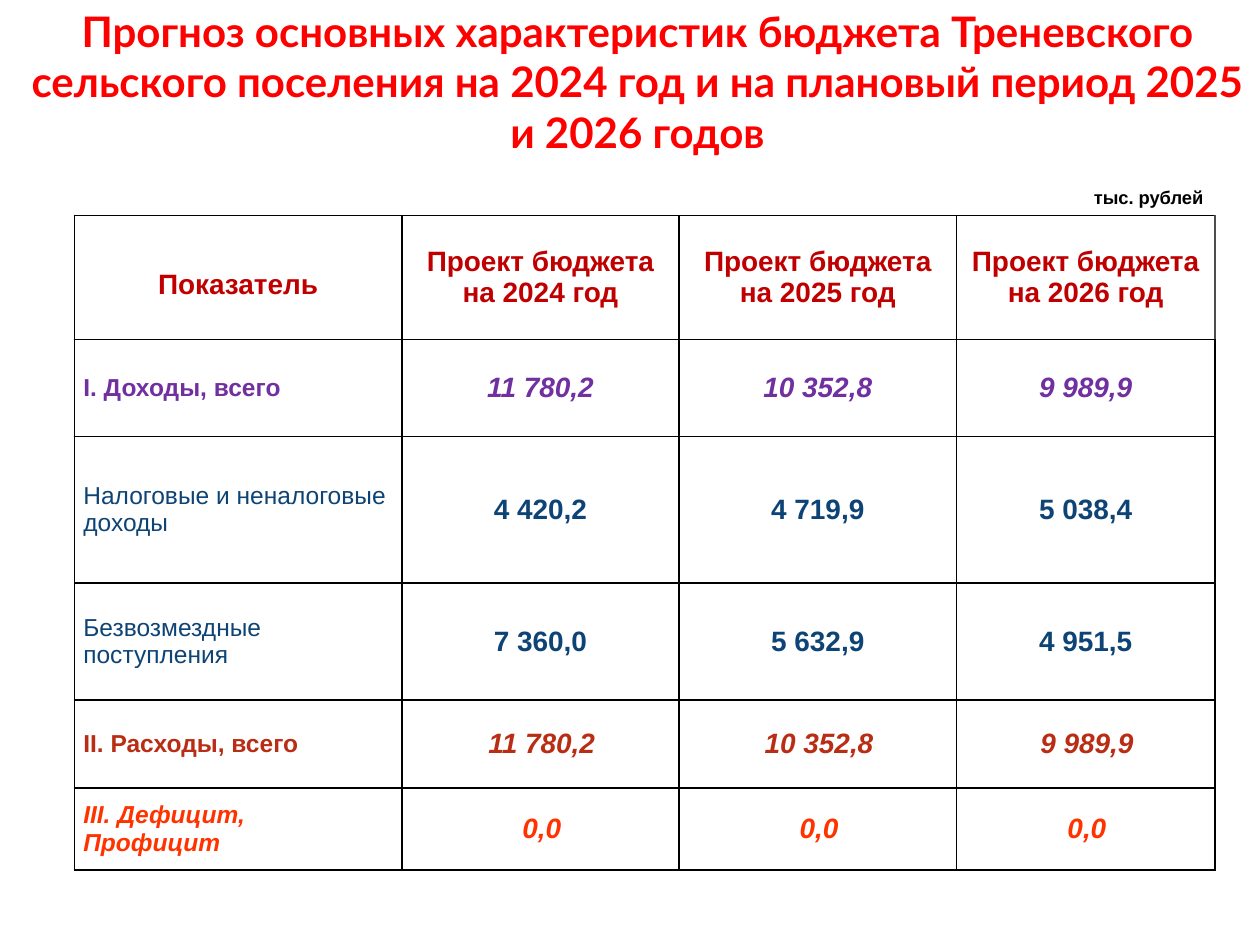
"""Build a slide with a table of budget forecast figures."""
from lxml.etree import SubElement
from pptx import Presentation
from pptx.dml.color import RGBColor
from pptx.enum.text import MSO_ANCHOR as Anchor, MSO_AUTO_SIZE as Fit, PP_ALIGN as Align
from pptx.oxml.ns import qn
from pptx.util import Cm, Pt

TITLE = ("Прогноз основных характеристик бюджета Треневского сельского "
         "поселения на 2024 год и на плановый период 2025 и 2026 годов")
UNIT = "тыс. рублей"
HEAD = ["Показатель"] + [f"Проект бюджета на {year} год" for year in (2024, 2025, 2026)]
ROWS = [
    (("I. Доходы, всего", "11 780,2", "10 352,8", "9 989,9"),
     dict(color="7030A0"), dict(italic=True)),
    (("Налоговые и неналоговые доходы", "4 420,2", "4 719,9", "5 038,4"),
     dict(color="0E4475"), dict(label_bold=False)),
    (("Безвозмездные поступления", "7 360,0", "5 632,9", "4 951,5"),
     dict(color="0E4475"), dict(label_bold=False)),
    (("II. Расходы, всего", "11 780,2", "10 352,8", "9 989,9"),
     dict(color="B92D14"), dict(italic=True, indent=0.05)),
    (("III. Дефицит,\nПрофицит", "0,0", "0,0", "0,0"),
     dict(color="FF3300", italic=True), dict(italic=True, indent=0.05)),
]
WIDTHS = [6.6, 5.59, 5.59, 5.21]
HEIGHTS = [2.51, 1.95, 2.95, 2.36, 1.78, 1.65]


def paint(font, color):
    font.color.rgb = RGBColor.from_string(color)


def write(frame, text, size=16, color="000000", name="Arial", bold=True,
          italic=False, align=Align.CENTER, indent=0, spacing=None):
    frame.text = text
    frame.word_wrap = True
    for para in frame.paragraphs:
        para.alignment = align
        para.line_spacing = spacing
        if indent:
            props = para._p.get_or_add_pPr()
            props.set("marL", "0")
            props.set("indent", str(Cm(indent)))
        for run in para.runs:
            font = run.font
            font.name, font.size = name, Pt(size)
            font.bold, font.italic = bold, italic
            paint(font, color)


def border(cell, right="000000"):
    props = cell._tc.get_or_add_tcPr()
    for side in "LRTB":
        line = SubElement(props, qn(f"a:ln{side}"), w=str(Pt(1)))
        fill = SubElement(line, qn("a:solidFill"))
        SubElement(fill, qn("a:srgbClr"), val=right if side == "R" else "000000")


def place(shape, left, top, width, height):
    shape.left, shape.top = Cm(left), Cm(top)
    shape.width, shape.height = Cm(width), Cm(height)


def fill_cell(cell, text, right="000000", **style):
    cell.vertical_anchor = Anchor.MIDDLE
    cell.margin_left = cell.margin_right = Cm(0.18)
    cell.margin_top = cell.margin_bottom = 0
    border(cell, right)
    cell.fill.background()
    write(cell.text_frame, text, **style)


def add_grid(slide):
    frame = slide.shapes.add_table(len(HEIGHTS), len(WIDTHS), Cm(1.5), Cm(4.34),
                                   Cm(sum(WIDTHS)), Cm(sum(HEIGHTS)))
    table = frame.table
    table.first_row = table.horz_banding = False
    for col, width in zip(table.columns, WIDTHS):
        col.width = Cm(width)
    for row, height in zip(table.rows, HEIGHTS):
        row.height = Cm(height)
    for col, text in enumerate(HEAD):
        extra = dict(indent=-0.18, spacing=1.5) if col == 0 else {}
        edge = "4D4D4D" if col == len(HEAD) - 1 else "000000"
        fill_cell(table.cell(0, col), text, edge, color="C00000", **extra)
    for row, (texts, base, extra) in enumerate(ROWS, 1):
        figure = {"indent": -0.18, **base, **extra}
        bold = figure.pop("label_bold", True)
        fill_cell(table.cell(row, 0), texts[0], size=14, bold=bold,
                  align=Align.LEFT, **base)
        for col, text in enumerate(texts[1:], 1):
            fill_cell(table.cell(row, col), text, **figure)


def main():
    deck = Presentation()
    deck.slide_width, deck.slide_height = Cm(25.4), Cm(19.05)
    slide = deck.slides.add_slide(deck.slide_layouts[5])
    title = slide.shapes.title
    place(title, 0.3, 0.53, 25.1, 2.21)
    title.text_frame.auto_size = Fit.NONE
    title.text_frame.vertical_anchor = Anchor.MIDDLE
    write(title.text_frame, TITLE, size=24, color="FF0000", name="Lato")
    unit = slide.shapes.add_textbox(Cm(20.9), Cm(3.63), Cm(3.61), Cm(0.71))
    write(unit.text_frame, UNIT, size=10.5, align=Align.RIGHT)
    unit.text_frame.auto_size = Fit.SHAPE_TO_FIT_TEXT
    add_grid(slide)
    deck.save("out.pptx")


if __name__ == "__main__":
    main()
